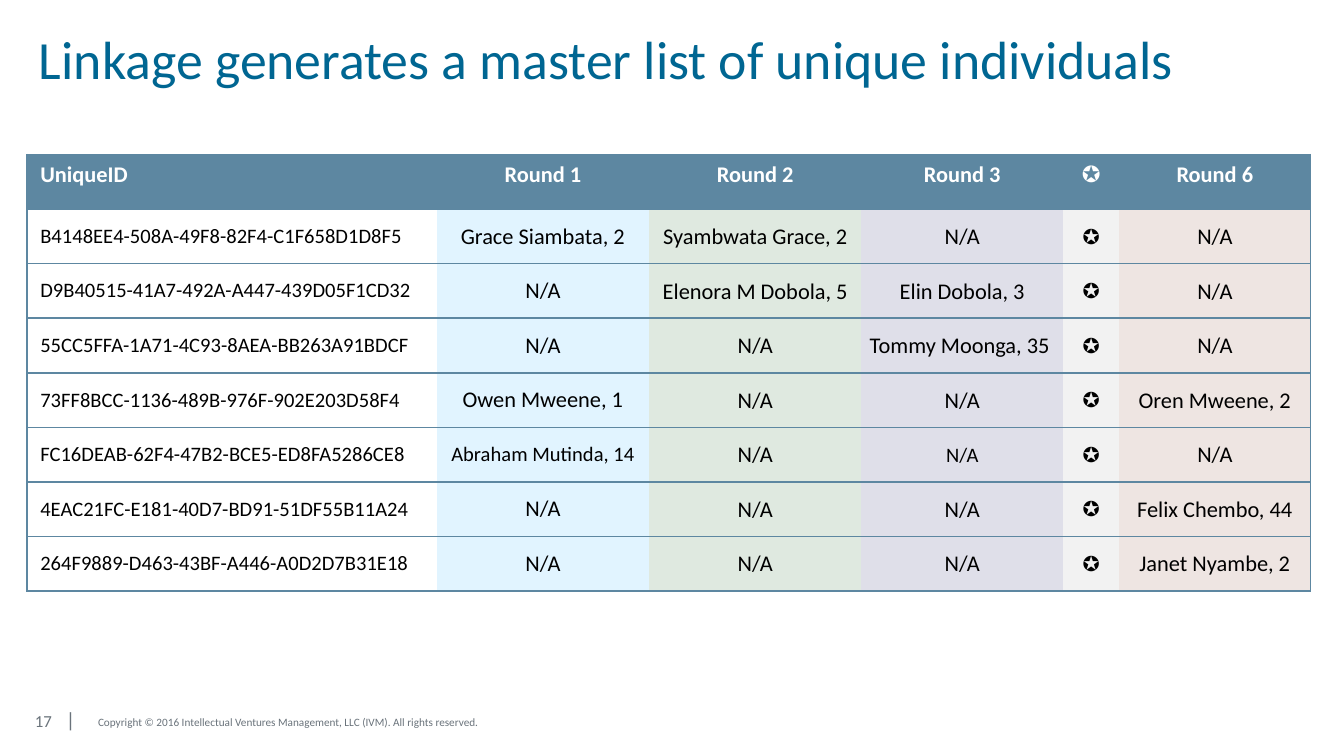
from dataclasses import dataclass

from lxml import etree
from pptx import Presentation
from pptx import util as u
from pptx.dml.color import RGBColor
from pptx.enum import text
from pptx.oxml import ns


@dataclass(frozen=True)
class Theme:
    font: str = "Calibri"
    title: str = "006692"
    accent: str = "5D87A1"
    footer: str = "6A737B"
    white: str = "FFFFFF"
    black: str = "000000"
    columns: tuple = ("FFFFFF", "E1F4FF", "DFE9E0", "DFDFE9", "F2F2F2", "EEE5E2")
    title_size: float = 28.8
    table_size: int = 12
    small_size: int = 11
    number_size: int = 9
    footer_size: int = 6


theme = Theme()


def style_font(font, size, color, bold=False):
    font.name = theme.font
    font.size = u.Pt(size)
    font.bold = bold
    font.color.rgb = RGBColor.from_string(color)


def add_border(cell, side, visible):
    """Draw or suppress one side (L, R, T, B); call in that order, before the fill."""
    line = etree.SubElement(cell._tc.get_or_add_tcPr(), ns.qn(f"a:ln{side}"), w=str(u.Pt(1)))
    if visible:
        fill = etree.SubElement(line, ns.qn("a:solidFill"))
        etree.SubElement(fill, ns.qn("a:srgbClr"), val=theme.accent)
    else:
        etree.SubElement(line, ns.qn("a:noFill"))


# Widescreen page, 16:9
deck = Presentation()
deck.slide_width = u.Inches(10)
deck.slide_height = deck.slide_width * 9 // 16
page = deck.slides.add_slide(deck.slide_layouts[5])

# Title
title = page.shapes.title
title.left, title.top = u.Inches(0.2), u.Inches(0.15)
title.width, title.height = u.Inches(9.55), u.Inches(0.67)
frame = title.text_frame
frame.text = "Linkage generates a master list of unique individuals"
frame.word_wrap = True
frame.auto_size = text.MSO_AUTO_SIZE.NONE
frame.vertical_anchor = text.MSO_ANCHOR.TOP
frame.margin_left = frame.margin_right = u.Inches(0.09)
frame.margin_top = frame.margin_bottom = u.Inches(0.04)
para = frame.paragraphs[0]
para.alignment = text.PP_ALIGN.LEFT
style_font(para.runs[0].font, theme.title_size, theme.title)

# Master list
STAR, NONE = "✪", "N/A"
rows = [
    ("UniqueID", "Round 1", "Round 2", "Round 3", STAR, "Round 6"),
    ("B4148EE4-508A-49F8-82F4-C1F658D1D8F5", "Grace Siambata, 2", "Syambwata Grace, 2", NONE, STAR, NONE),
    ("D9B40515-41A7-492A-A447-439D05F1CD32", NONE, "Elenora M Dobola, 5", "Elin Dobola, 3", STAR, NONE),
    ("55CC5FFA-1A71-4C93-8AEA-BB263A91BDCF", NONE, NONE, "Tommy Moonga, 35 ", STAR, NONE),
    ("73FF8BCC-1136-489B-976F-902E203D58F4", "Owen Mweene, 1", NONE, NONE, STAR, "Oren Mweene, 2"),
    ("FC16DEAB-62F4-47B2-BCE5-ED8FA5286CE8", "Abraham Mutinda, 14", NONE, NONE, STAR, NONE),
    ("4EAC21FC-E181-40D7-BD91-51DF55B11A24", NONE, NONE, NONE, STAR, "Felix Chembo, 44"),
    ("264F9889-D463-43BF-A446-A0D2D7B31E18", NONE, NONE, NONE, STAR, "Janet Nyambe, 2"),
]
widths = [3.05, 1.58, 1.58, 1.5, 0.42, 1.42]
small_columns = {0, 4}
small_cells = {(5, 1), (5, 3)}
last = len(widths) - 1

table = page.shapes.add_table(
    len(rows), len(widths), u.Inches(0.2), u.Inches(1.15), u.Inches(9.55), u.Inches(3.25)
).table
table.first_row = table.horz_banding = False
for column, width in zip(table.columns, widths):
    column.width = u.Inches(width)

for r, row in enumerate(rows):
    header = r == 0
    for c, value in enumerate(row):
        cell = table.cell(r, c)
        for side, visible in (("L", c == 0), ("R", c == last), ("T", True), ("B", True)):
            add_border(cell, side, visible)
        cell.fill.solid()
        cell.fill.fore_color.rgb = RGBColor.from_string(theme.accent if header else theme.columns[c])
        cell.vertical_anchor = text.MSO_ANCHOR.TOP if header else text.MSO_ANCHOR.MIDDLE
        if not header and c > 1:
            cell.margin_left = cell.margin_right = cell.margin_top = u.Inches(0.01)
            cell.margin_bottom = 0
        para = cell.text_frame.paragraphs[0]
        para.text = value
        para.alignment = text.PP_ALIGN.CENTER if c else text.PP_ALIGN.LEFT
        small = not header and (c in small_columns or (r, c) in small_cells)
        style_font(
            para.runs[0].font,
            theme.small_size if small else theme.table_size,
            theme.white if header else theme.black,
            bold=header,
        )

# Footer: page number with divider, then copyright
footers = [
    ((0.2, 5.15, 0.55, 0.41), text.MSO_ANCHOR.MIDDLE, 0.03,
     [("17\t", theme.number_size), ("|", theme.small_size)]),
    ((0.67, 5.26, 3.17, 0.3), text.MSO_ANCHOR.TOP, 0.06,
     [("Copyright © 2016 Intellectual Ventures Management, LLC (IVM). All rights reserved.",
       theme.footer_size)]),
]
for place, anchor, top_margin, spans in footers:
    frame = page.shapes.add_textbox(*map(u.Inches, place)).text_frame
    frame.word_wrap = True
    frame.vertical_anchor = anchor
    frame.margin_left = frame.margin_right = u.Inches(0.06)
    frame.margin_top, frame.margin_bottom = u.Inches(top_margin), u.Inches(0.03)
    para = frame.paragraphs[0]
    if len(spans) > 1:
        tabs = etree.SubElement(para._p.get_or_add_pPr(), ns.qn("a:tabLst"))
        etree.SubElement(tabs, ns.qn("a:tab"), pos=str(u.Inches(0.23)), algn="l")
    for words, size in spans:
        span = para.add_run()
        span.text = words
        style_font(span.font, size, theme.footer)

deck.save("out.pptx")
